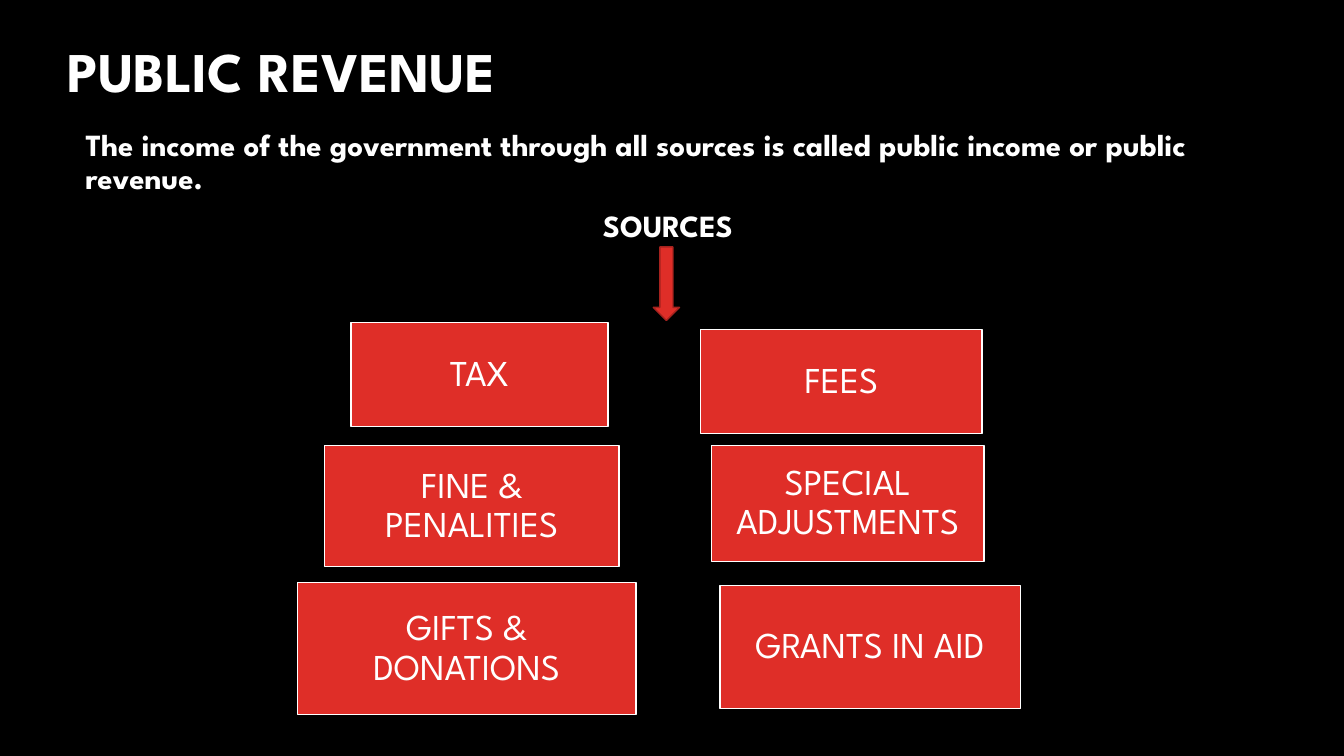
from pptx import Presentation
from pptx.dml.color import RGBColor
from pptx.enum.shapes import MSO_SHAPE
from pptx.enum.text import MSO_ANCHOR, MSO_AUTO_SIZE, PP_ALIGN
from pptx.util import Inches, Pt

BLACK, WHITE, RED, DARK_RED = "000000", "FFFFFF", "DF2E28", "A5221E"


def colour(hex_string):
    return RGBColor.from_string(hex_string)


class RevenueSlide:
    font_name = "League Spartan"

    def __init__(self, presentation):
        self.slide = presentation.slides.add_slide(presentation.slide_layouts[5])
        background = self.slide.background.fill
        background.solid()
        background.fore_color.rgb = colour(BLACK)

    def style(self, paragraph, size, bold=False, align=PP_ALIGN.LEFT):
        paragraph.alignment = align
        paragraph.line_spacing = 0.9
        font = paragraph.font
        font.name, font.size, font.bold = self.font_name, Pt(size), bold
        font.color.rgb = colour(WHITE)

    def title(self, text, left, top, width, height):
        heading = self.slide.shapes.title
        heading.left, heading.top = Inches(left), Inches(top)
        heading.width, heading.height = Inches(width), Inches(height)
        frame = heading.text_frame
        frame.text = text
        frame.auto_size = MSO_AUTO_SIZE.NONE
        frame.vertical_anchor = MSO_ANCHOR.MIDDLE
        self.style(frame.paragraphs[0], 40, bold=True)

    def body(self, lines, left, top, width, height):
        frame = self.slide.shapes.add_textbox(
            Inches(left), Inches(top), Inches(width), Inches(height)).text_frame
        frame.word_wrap = True
        for index, (text, align) in enumerate(lines):
            paragraph = frame.add_paragraph() if index else frame.paragraphs[0]
            paragraph.text = text
            self.style(paragraph, 22, bold=True, align=align)
            if index:
                paragraph.space_before = Pt(10)

    def shape(self, kind, line, left, top, width, height):
        shape = self.slide.shapes.add_shape(
            kind, Inches(left), Inches(top), Inches(width), Inches(height))
        shape.shadow.inherit = False
        shape.fill.solid()
        shape.fill.fore_color.rgb = colour(RED)
        shape.line.color.rgb = colour(line)
        shape.line.width = Pt(1)
        return shape

    def source_box(self, text, *place):
        frame = self.shape(MSO_SHAPE.RECTANGLE, WHITE, *place).text_frame
        frame.word_wrap = True
        frame.vertical_anchor = MSO_ANCHOR.MIDDLE
        frame.margin_left = frame.margin_right = Inches(0.11)
        frame.margin_top = frame.margin_bottom = Inches(0.11)
        frame.text = text
        self.style(frame.paragraphs[0], 26, align=PP_ALIGN.CENTER)

    def down_arrow(self, *place):
        self.shape(MSO_SHAPE.DOWN_ARROW, DARK_RED, *place)


def main():
    presentation = Presentation()
    presentation.slide_width, presentation.slide_height = Inches(13.33), Inches(7.5)
    revenue = RevenueSlide(presentation)

    # Heading and definition
    revenue.title("PUBLIC REVENUE", 0.57, 0.23, 11.83, 1.01)
    revenue.body([
        ("The income of the government through all sources is called "
         "public income or public revenue.", PP_ALIGN.LEFT),
        ("SOURCES ", PP_ALIGN.CENTER),
    ], 0.75, 1.24, 11.83, 5.56)

    # Sources of revenue
    sources = [
        ("TAX", 3.48, 3.2, 2.55, 1.03),
        ("FEES", 6.95, 3.27, 2.79, 1.03),
        ("FINE & PENALITIES", 3.22, 4.42, 2.92, 1.2),
        ("SPECIAL ADJUSTMENTS", 7.06, 4.42, 2.7, 1.15),
        ("GIFTS & DONATIONS", 2.95, 5.78, 3.36, 1.31),
        ("GRANTS IN AID", 7.14, 5.81, 2.98, 1.22),
    ]
    for source in sources:
        revenue.source_box(*source)

    # Arrow from the label to the sources
    revenue.down_arrow(6.48, 2.45, 0.26, 0.73)

    presentation.save("out.pptx")


if __name__ == "__main__":
    main()
